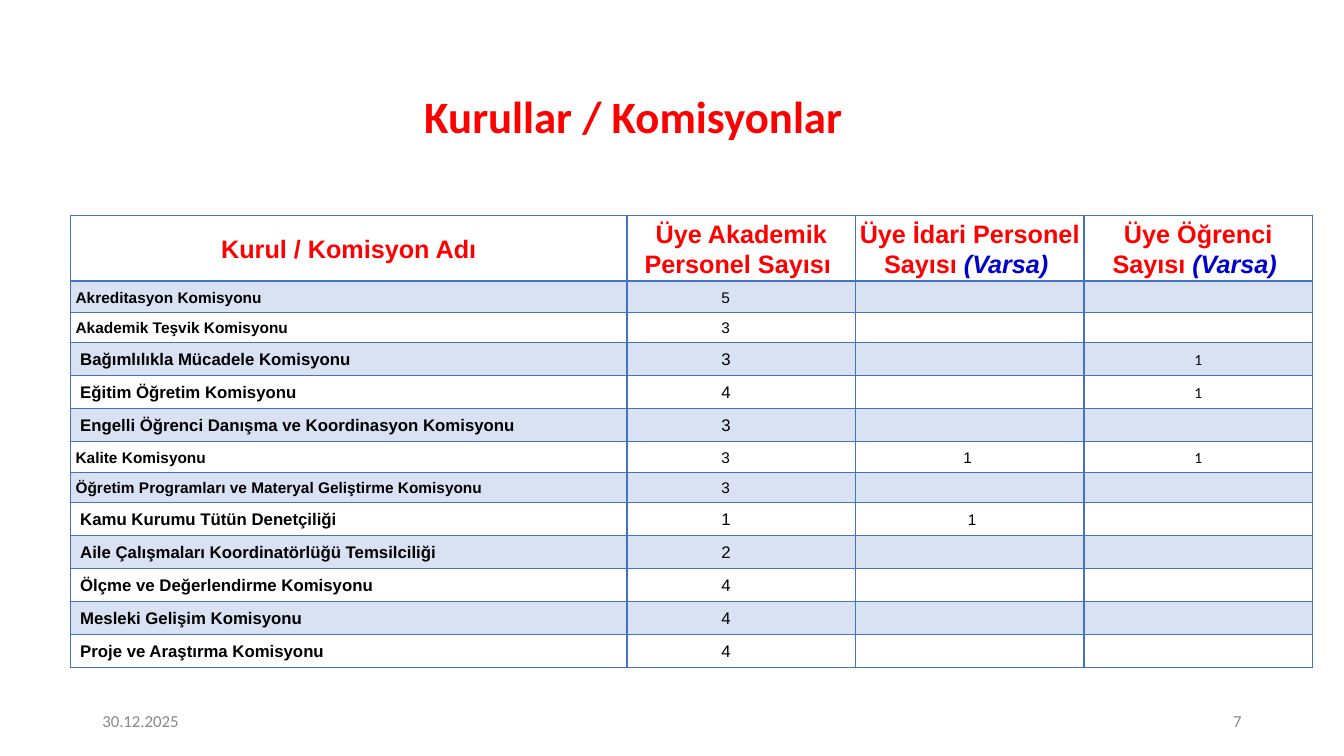
from lxml import etree
from pptx import Presentation
from pptx.dml.color import RGBColor
from pptx.enum import text as t
from pptx.oxml import ns
from pptx.util import Pt

COLORS = {"red": "FF0000", "blue": "0000CC", "black": "000000",
          "gray": "888888", "accent": "4472C4"}
LEFT, CENTER, RIGHT = t.PP_ALIGN.LEFT, t.PP_ALIGN.CENTER, t.PP_ALIGN.RIGHT

HEADERS = [("Kurul / Komisyon Adı", ""),
           ("Üye Akademik Personel Sayısı ", ""),
           ("Üye İdari Personel Sayısı ", "(Varsa) "),
           ("Üye Öğrenci Sayısı ", "(Varsa) ")]
# name, text size, row height, academic, administrative and student members
BOARDS = [
    ("Akreditasyon Komisyonu", 11, 22.3, "5", "", ""),
    ("Akademik Teşvik Komisyonu", 11, 21.4, "3", "", ""),
    ("Bağımlılıkla Mücadele Komisyonu", 12, 23.6, "3", "", "1"),
    ("Eğitim Öğretim Komisyonu", 12, 23.6, "4", "", "1"),
    ("Engelli Öğrenci Danışma ve Koordinasyon Komisyonu", 12, 23.6, "3", "", ""),
    ("Kalite Komisyonu", 11, 22.1, "3", "1", "1"),
    ("Öğretim Programları ve Materyal Geliştirme Komisyonu", 11, 21.4, "3", "", ""),
    ("Kamu Kurumu Tütün Denetçiliği", 12, 23.6, "1", "1", ""),
    ("Aile Çalışmaları Koordinatörlüğü Temsilciliği", 12, 23.6, "2", "", ""),
    ("Ölçme ve Değerlendirme Komisyonu", 12, 23.6, "4", "", ""),
    ("Mesleki Gelişim Komisyonu", 12, 23.6, "4", "", ""),
    ("Proje ve Araştırma Komisyonu", 12, 23.6, "4", "", ""),
]
COLUMN_WIDTHS = [397.5, 163.2, 163.2, 163.2]
HEADER_HEIGHT = 44.3


def write(paragraph, words, size=12, font="Arial", color="black",
          bold=False, italic=False, align=LEFT, spacing=1.0):
    paragraph.alignment = align
    paragraph.line_spacing = spacing
    run = paragraph.add_run()
    run.text = words
    run.font.name = font
    run.font.size = Pt(size)
    run.font.bold = bold
    run.font.italic = italic
    run.font.color.rgb = RGBColor.from_string(COLORS[color])


def add_text(slide, words, left, top, width, height, **style):
    frame = slide.shapes.add_textbox(Pt(left), Pt(top), Pt(width), Pt(height)).text_frame
    frame.word_wrap = True
    frame.vertical_anchor = t.MSO_ANCHOR.MIDDLE
    write(frame.paragraphs[0], words, font="Calibri", **style)


def set_borders(cell, bottom=1):
    properties = cell._tc.get_or_add_tcPr()
    for side, width in (("L", 1), ("R", 1), ("T", 1), ("B", bottom)):
        line = etree.SubElement(properties, ns.qn(f"a:ln{side}"), w=str(Pt(width)))
        fill = etree.SubElement(line, ns.qn("a:solidFill"))
        etree.SubElement(fill, ns.qn("a:srgbClr"), val=COLORS["accent"])


def format_cell(cell, side_margin, indent=0, tinted=False, bottom=1):
    """Set borders, margins and fill; tinted cells get the accent at 20 % opacity."""
    set_borders(cell, bottom)
    cell.vertical_anchor = t.MSO_ANCHOR.MIDDLE
    cell.margin_left = Pt(side_margin + indent)
    cell.margin_right = Pt(side_margin)
    cell.margin_top, cell.margin_bottom = Pt(0.7), Pt(0)
    if tinted:
        cell.fill.solid()
        cell.fill.fore_color.rgb = RGBColor.from_string(COLORS["accent"])
        color = cell._tc.tcPr.find(".//" + ns.qn("a:solidFill") + "[last()]/" + ns.qn("a:srgbClr"))
        color = cell._tc.tcPr.find(ns.qn("a:solidFill")).find(ns.qn("a:srgbClr"))
        etree.SubElement(color, ns.qn("a:alpha"), val="20000")
    else:
        cell.fill.background()


def fill_header(table):
    for column, (title, note) in enumerate(HEADERS):
        cell = table.cell(0, column)
        format_cell(cell, 0.7 if column else 3.6, bottom=2)
        heading = cell.text_frame.paragraphs[0]
        style = dict(size=18, bold=True, align=CENTER, spacing=1.07)
        write(heading, title, color="red", **style)
        if note:
            write(heading, note, color="blue", italic=True, **style)


def fill_board(table, row, name, size, counts):
    large = size == 12
    styles = [
        (3.3 if large else 0, dict(size=size, bold=True)),
        (66.7, dict(size=size)),
        (79.5 if large else 76.4, dict(size=11)),
        (0, dict(size=11, font="Calibri", align=CENTER)),
    ]
    for column, (words, (indent, style)) in enumerate(zip((name, *counts), styles)):
        cell = table.cell(row, column)
        format_cell(cell, 0.7 if column else 3.6, indent, tinted=row % 2 == 1)
        entry = cell.text_frame.paragraphs[0]
        if words:
            write(entry, words, spacing=1.07, **style)
        else:
            entry._p.get_or_add_endParaRPr().set("sz", "1100")


def add_boards_table(slide):
    heights = [HEADER_HEIGHT] + [board[2] for board in BOARDS]
    table = slide.shapes.add_table(len(heights), len(COLUMN_WIDTHS), Pt(50.4), Pt(153.9),
                                   Pt(sum(COLUMN_WIDTHS)), Pt(sum(heights))).table
    table.horz_banding = False
    table.first_row = False
    for column, width in zip(table.columns, COLUMN_WIDTHS):
        column.width = Pt(width)
    for row, height in zip(table.rows, heights):
        row.height = Pt(height)
    fill_header(table)
    for row, (name, size, _, *counts) in enumerate(BOARDS, 1):
        fill_board(table, row, name, size, counts)


def main():
    deck = Presentation()
    deck.slide_width, deck.slide_height = Pt(960), Pt(540)
    slide = deck.slides.add_slide(deck.slide_layouts[6])
    add_text(slide, "Kurullar / Komisyonlar", 50.4, 56.2, 804.2, 57.6,
             size=32, color="red", bold=True, align=CENTER, spacing=0.9)
    add_text(slide, "30.12.2025", 66, 500.5, 216, 28.8, color="gray")
    add_text(slide, "7", 678, 500.5, 216, 28.8, color="gray", align=RIGHT)
    add_boards_table(slide)
    deck.save("out.pptx")


if __name__ == "__main__":
    main()
